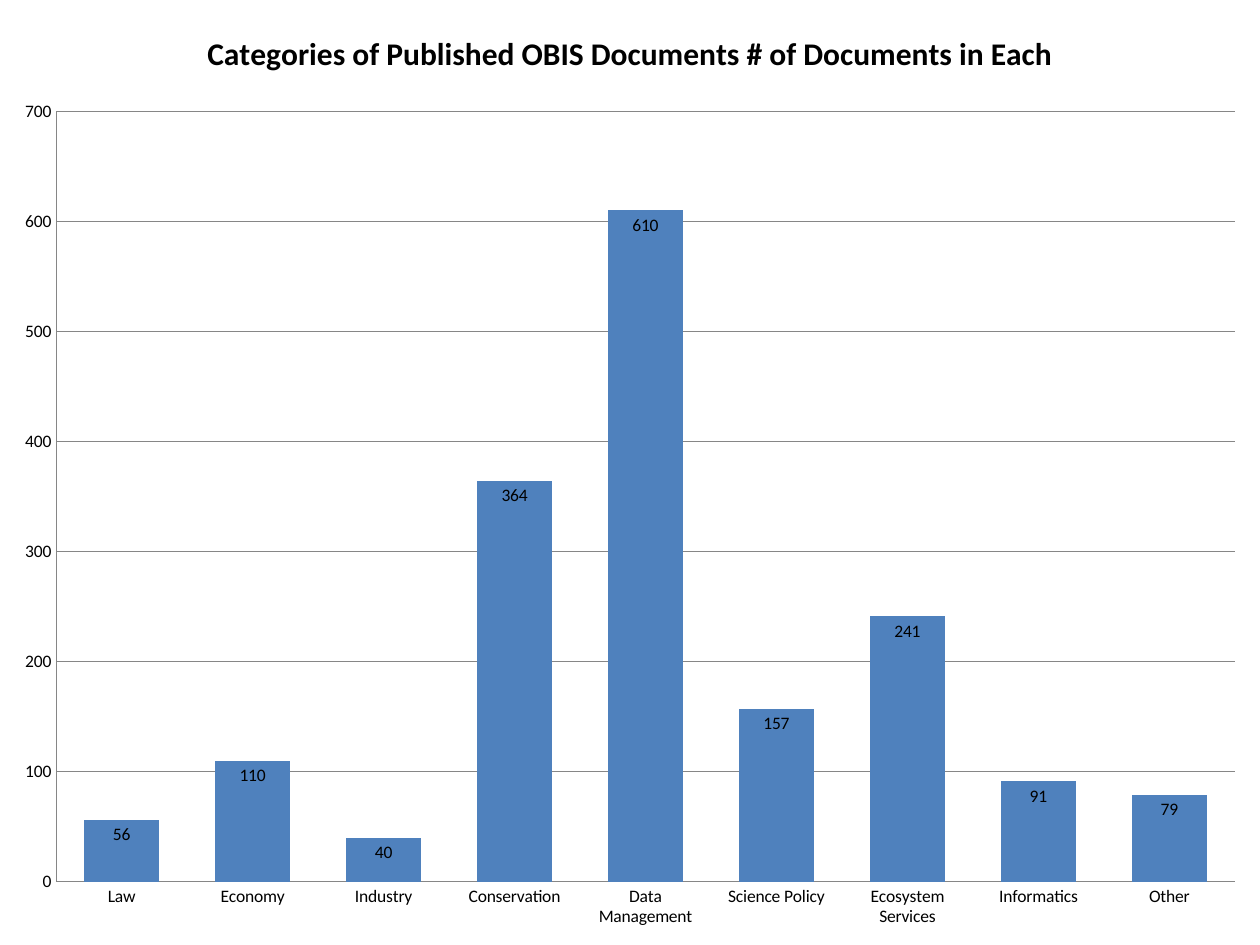
import pptx
import pptx.chart.data
import pptx.dml.color
import pptx.enum.chart
import pptx.util

Inches = pptx.util.Inches
Pt = pptx.util.Pt
RGBColor = pptx.dml.color.RGBColor

BLACK = RGBColor(0x00, 0x00, 0x00)
BLUE = RGBColor(0x4F, 0x81, 0xBD)
GRAY = RGBColor(0x86, 0x86, 0x86)

TITLE = "Categories of Published OBIS Documents # of Documents in Each"
DOCUMENTS = {
    "Law": 56,
    "Economy": 110,
    "Industry": 40,
    "Conservation": 364,
    "Data Management": 610,
    "Science Policy": 157,
    "Ecosystem Services": 241,
    "Informatics": 91,
    "Other": 79,
}


class SlideBuilder:
    """Holds the chart style and the current slide."""

    font_name = "Calibri"
    text_size = Pt(10)
    title_size = Pt(18)

    def __init__(self, page):
        self.page = page

    def style_font(self, font, size, bold=False):
        font.name = self.font_name
        font.size = size
        font.bold = bold
        font.color.rgb = BLACK

    def style_line(self, line):
        line.color.rgb = GRAY
        line.width = Pt(0.75)

    def add_column_chart(self, title, counts, left, top, width, height):
        data = pptx.chart.data.CategoryChartData()
        data.categories = list(counts)
        data.add_series("Series 1", list(counts.values()))
        chart = self.page.shapes.add_chart(
            pptx.enum.chart.XL_CHART_TYPE.COLUMN_CLUSTERED,
            left, top, width, height, data,
        ).chart
        self.style_font(chart.font, self.text_size)
        chart.has_legend = False

        # Title
        chart.has_title = True
        chart.chart_title.include_in_layout = False
        paragraph = chart.chart_title.text_frame.paragraphs[0]
        paragraph.text = title
        self.style_font(paragraph.runs[0].font, self.title_size, bold=True)

        # Axes
        for axis in (chart.category_axis, chart.value_axis):
            axis.major_tick_mark = pptx.enum.chart.XL_TICK_MARK.NONE
            axis.minor_tick_mark = pptx.enum.chart.XL_TICK_MARK.NONE
            self.style_line(axis.format.line)
        chart.value_axis.minimum_scale = 0
        chart.value_axis.maximum_scale = 700
        chart.value_axis.major_unit = 100
        chart.value_axis.has_major_gridlines = True
        self.style_line(chart.value_axis.major_gridlines.format.line)

        # Columns and their labels
        plot = chart.plots[0]
        plot.gap_width = 75
        plot.overlap = 40
        plot.vary_by_categories = False
        series = plot.series[0]
        series.format.fill.solid()
        series.format.fill.fore_color.rgb = BLUE
        labels = series.data_labels
        labels.show_value = True
        labels.position = pptx.enum.chart.XL_LABEL_POSITION.INSIDE_END
        self.style_font(labels.font, self.text_size)
        return chart


def main():
    deck = pptx.Presentation()
    deck.slide_width = Inches(10)
    deck.slide_height = Inches(7.5)
    page = deck.slides.add_slide(deck.slide_layouts[6])  # blank layout

    # The chart fills the whole slide
    SlideBuilder(page).add_column_chart(
        TITLE, DOCUMENTS, Inches(0), Inches(0), Inches(10), Inches(7.5)
    )
    deck.save("out.pptx")


if __name__ == "__main__":
    main()
